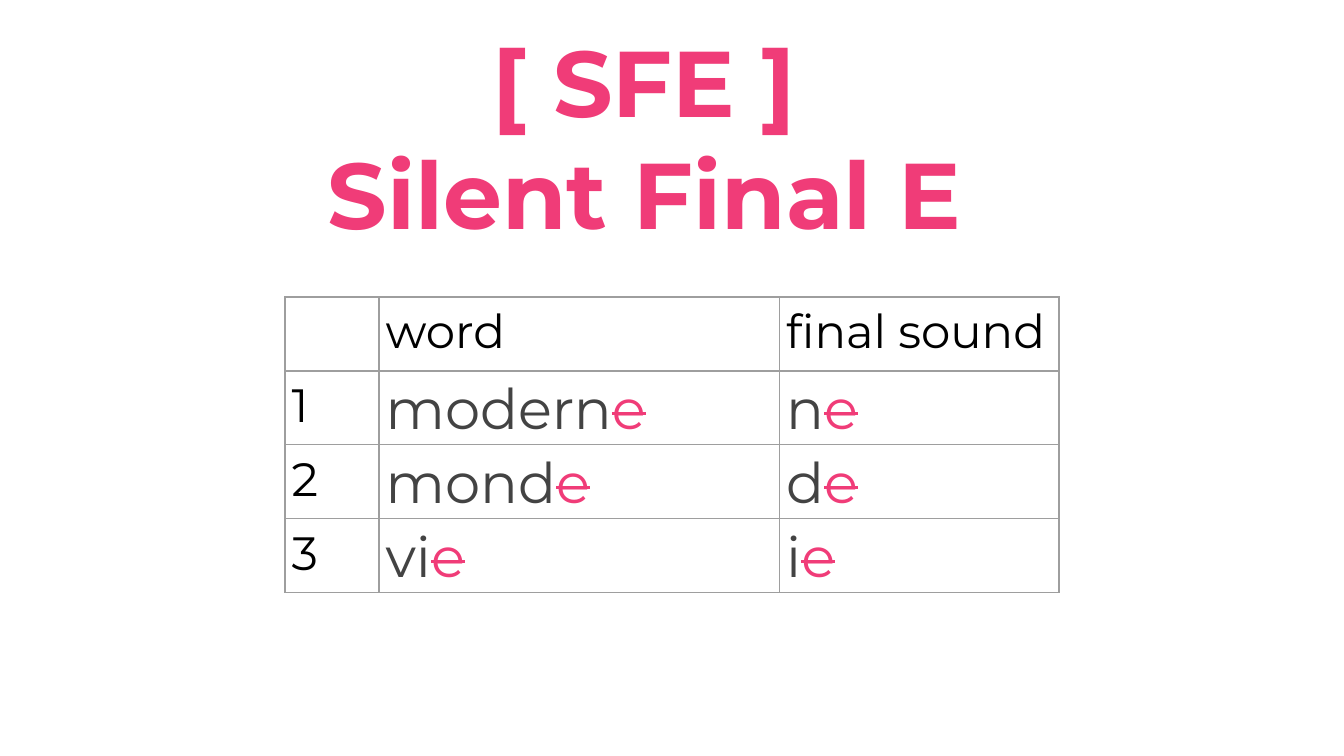
from lxml.etree import SubElement
from pptx import Presentation
from pptx.dml.color import RGBColor
from pptx.enum.text import MSO_ANCHOR, PP_ALIGN
from pptx.oxml.ns import qn
from pptx.util import Inches, Pt

COLORS = {"pink": "F03C78", "gray": "434343", "black": "000000", "border": "9E9E9E"}
FONT = "Montserrat"
TITLE = {"size": Pt(50), "bold": True}
LABEL = {"size": Pt(25)}
WORD = {"size": Pt(30)}

SLIDE_WIDTH = 10
SLIDE_HEIGHT = SLIDE_WIDTH * 9 / 16
COLUMNS = [0.7, 2.98, 2.08]
ROW_HEIGHT = 0.55
HEADINGS = ["", "word", "final sound"]
# Sounded part of each word and of its final sound; the silent e follows
EXAMPLES = [("modern", "n"), ("mond", "d"), ("vi", "i")]


def add_run(paragraph, text, color, formats):
    run = paragraph.add_run()
    run.text = text
    for name, value in {"name": FONT, **formats}.items():
        setattr(run.font, name, value)
    run.font.color.rgb = RGBColor.from_string(COLORS[color])
    return run


def set_margins(target, side, end):
    margins = {"left": side, "right": side, "top": end, "bottom": end}
    for edge, margin in margins.items():
        setattr(target, f"margin_{edge}", Inches(margin))


def add_text_frame(slide, left, top, width, height, side, end):
    box = slide.shapes.add_textbox(Inches(left), Inches(top), Inches(width), Inches(height))
    frame = box.text_frame
    frame.word_wrap = True
    frame.vertical_anchor = MSO_ANCHOR.TOP
    set_margins(frame, side, end)
    return frame


def add_title(slide, left, top, width, height):
    frame = add_text_frame(slide, left, top, width, height, 0.1, 0.1)
    for paragraph, line in ((frame.paragraphs[0], "[ SFE ]"),
                            (frame.add_paragraph(), "Silent Final E")):
        paragraph.alignment = PP_ALIGN.CENTER
        add_run(paragraph, line, "pink", TITLE)


def add_borders(cell):
    properties = cell._tc.get_or_add_tcPr()
    for edge in ("a:lnL", "a:lnR", "a:lnT", "a:lnB"):
        border = SubElement(properties, qn(edge), w=str(Pt(0.75)))
        fill = SubElement(border, qn("a:solidFill"))
        SubElement(fill, qn("a:srgbClr"), val=COLORS["border"])


def add_word_table(slide, left, top):
    rows = [HEADINGS] + [[str(n), "", ""] for n in range(1, len(EXAMPLES) + 1)]
    table = slide.shapes.add_table(
        len(rows), len(COLUMNS), Inches(left), Inches(top),
        Inches(sum(COLUMNS)), Inches(ROW_HEIGHT * len(rows))).table
    table.first_row = table.horz_banding = False
    for column, width in zip(table.columns, COLUMNS):
        column.width = Inches(width)
    for r, labels in enumerate(rows):
        table.rows[r].height = Inches(ROW_HEIGHT)
        for c, label in enumerate(labels):
            cell = table.cell(r, c)
            set_margins(cell, 0.05, 0.05)
            add_borders(cell)
            cell.fill.background()
            if label:
                add_run(cell.text_frame.paragraphs[0], label, "black", LABEL)


def add_silent_e(slide, left, top, sounded):
    frame = add_text_frame(slide, left, top, 2.24, 0.77, 0.05, 0.02)
    paragraph = frame.paragraphs[0]
    add_run(paragraph, sounded, "gray", WORD)
    silent = add_run(paragraph, "e", "pink", WORD)
    silent._r.get_or_add_rPr().set("strike", "sngStrike")


def add_examples(slide, left, top):
    # Words sit over the empty cells of the second and third columns
    lefts = (left + COLUMNS[0], left + COLUMNS[0] + COLUMNS[1])
    for row, example in enumerate(EXAMPLES, start=1):
        for x, sounded in zip(lefts, example):
            add_silent_e(slide, x, top + row * ROW_HEIGHT, sounded)


def main():
    presentation = Presentation()
    presentation.slide_width = Inches(SLIDE_WIDTH)
    presentation.slide_height = Inches(SLIDE_HEIGHT)
    slide = presentation.slides.add_slide(presentation.slide_layouts[6])
    add_title(slide, 1.45, 0.08, 6.69, 1.63)
    add_word_table(slide, 2.12, 2.21)
    add_examples(slide, 2.12, 2.21)
    presentation.save("out.pptx")


if __name__ == "__main__":
    main()
